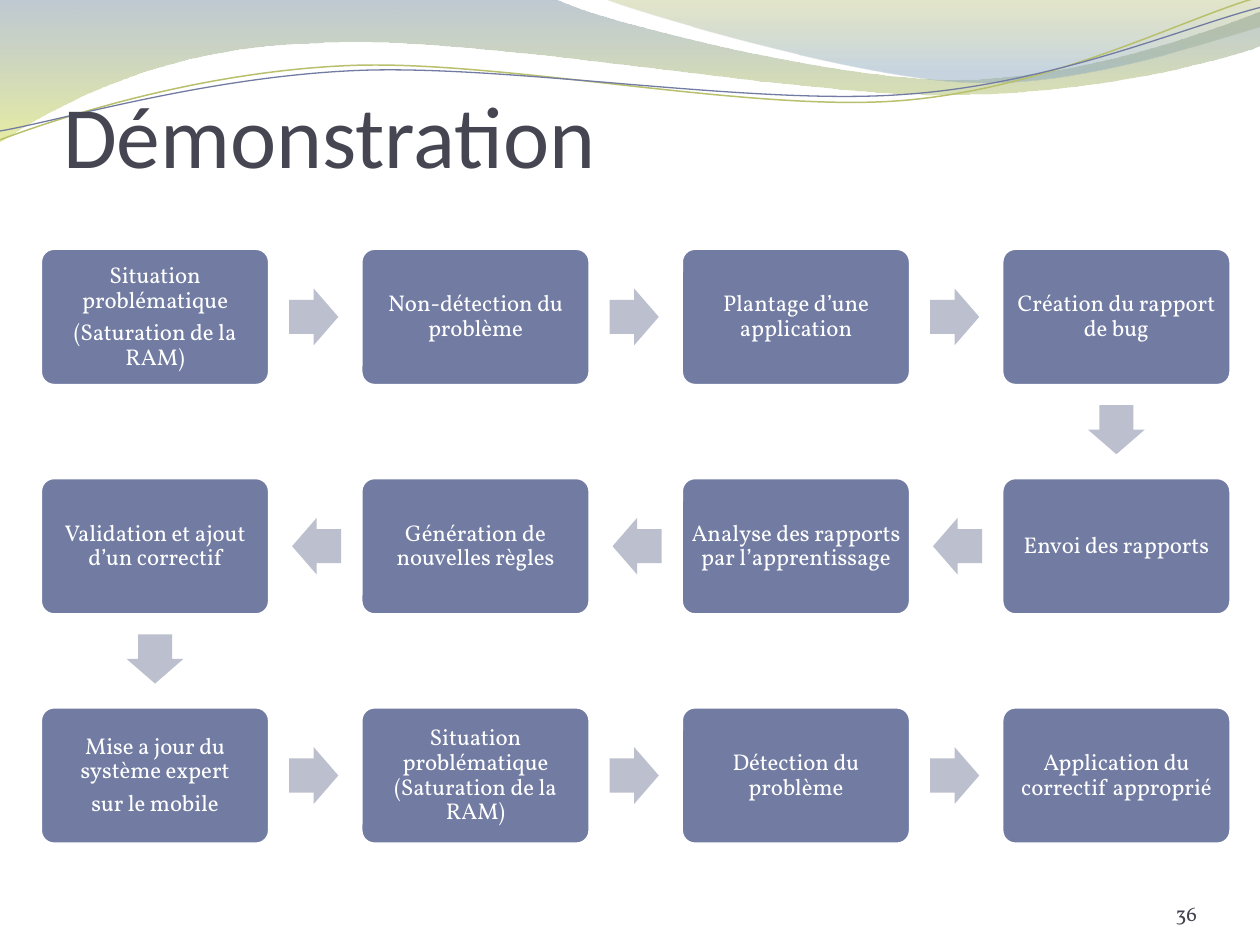
import math

import pptx
import pptx.util
import pptx.dml.color
import pptx.enum.shapes
import pptx.enum.text
import pptx.oxml.ns
import lxml.etree

Inches, Pt = pptx.util.Inches, pptx.util.Pt
RGBColor = pptx.dml.color.RGBColor
MSO_SHAPE = pptx.enum.shapes.MSO_SHAPE
ANCHOR = pptx.enum.text.MSO_ANCHOR
ALIGN = pptx.enum.text.PP_ALIGN
qn = pptx.oxml.ns.qn

WHITE = RGBColor(0xFF, 0xFF, 0xFF)
TITLE_INK = RGBColor(0x46, 0x46, 0x53)
NUMBER_INK = RGBColor(0x43, 0x43, 0x4F)
INDIGO = RGBColor(0x72, 0x7C, 0xA3)
ARROW_GREY = RGBColor(0xBC, 0xBF, 0xCE)
OLIVE_LINE = RGBColor(0xB9, 0xC0, 0x6C)
SLATE = RGBColor(0x72, 0x88, 0x9B)
LIME = RGBColor(0xD3, 0xDE, 0x57)
OLIVE = RGBColor(0xA4, 0xAC, 0x50)
SKY = RGBColor(0x84, 0xA3, 0xBD)

# Each wave is a list of segments: two numbers for a line, six for a Bézier curve
LEFT_WAVE = [(0, 0), (4.4, -0.01), (4.76, 0.17, 6.64, 0.63, 7.58, 0.63),
             (8.53, 0.63, 9.58, 0.26, 10, 0.09), (10.01, 0.36),
             (9.83, 0.44, 8.7, 0.76, 7.46, 0.75),
             (6.22, 0.75, 3.82, 0.28, 2.57, 0.34),
             (1.29, 0.36, 0.46, 0.83, -0.01, 1.13)]
RIGHT_WAVE = [(4.79, -0.01), (5.09, 0.11, 6.82, 0.62, 7.69, 0.65),
              (8.56, 0.69, 9.61, 0.32, 10, 0.21), (10, 0)]
OLIVE_CURVE = [(0, 1.11), (0.48, 0.93, 1.58, 0.57, 2.77, 0.52),
               (3.95, 0.47, 5.93, 0.89, 7.13, 0.8),
               (8.33, 0.71, 9.38, 0.15, 9.98, -0.02)]
INDIGO_CURVE = [(0, 1.04), (0.47, 0.96, 1.64, 0.61, 2.83, 0.56),
                (4.03, 0.51, 5.97, 0.84, 7.17, 0.75),
                (8.36, 0.67, 9.41, 0.21, 10, 0.06)]
CURVE_TILT = -2.7

# Steps in reading order of the grid; the flow snakes through the rows
STEPS = [
    [["Situation problématique", "(Saturation de la RAM)"],
     ["Non-détection du problème"],
     ["Plantage d’une application"],
     ["Création du rapport de bug"]],
    [["Validation et ajout d’un correctif"],
     ["Génération de nouvelles règles"],
     ["Analyse des rapports par l’apprentissage"],
     ["Envoi des rapports"]],
    [["Mise a jour du système expert", "sur le mobile"],
     ["Situation problématique (Saturation de la RAM)"],
     ["Détection du problème"],
     ["Application du correctif approprié"]],
]


def write_text(shape, paragraphs, size, color, font="Vollkorn", align=ALIGN.LEFT,
               anchor=ANCHOR.BOTTOM, margins=(0, 0, 0, 0), line=1.0, after=0):
    frame = shape.text_frame
    frame.word_wrap = True
    frame.auto_size = pptx.enum.text.MSO_AUTO_SIZE.NONE
    frame.vertical_anchor = anchor
    (frame.margin_left, frame.margin_top,
     frame.margin_right, frame.margin_bottom) = map(Inches, margins)
    frame.text = "\n".join(paragraphs)
    for paragraph in frame.paragraphs:
        paragraph.alignment = align
        paragraph.line_spacing = line
        paragraph.space_before, paragraph.space_after = Pt(0), Pt(after)
        for run in paragraph.runs:
            run.font.name, run.font.size = font, Pt(size)
            run.font.color.rgb = color


def turn(point, center, degrees):
    angle = math.radians(degrees)
    dx, dy = point[0] - center[0], point[1] - center[1]
    return (center[0] + dx * math.cos(angle) - dy * math.sin(angle),
            center[1] + dx * math.sin(angle) + dy * math.cos(angle))


def add_wave(slide, segments, closed, tilt=0, center=(0, 0)):
    points = [turn(segment[i:i + 2], center, -tilt)
              for segment in segments for i in range(0, len(segment), 2)]
    points = [(Inches(x), Inches(y)) for x, y in points]
    builder = slide.shapes.build_freeform(*points[0])
    builder.add_line_segments(points[1:], close=closed)
    wave = builder.convert_to_shape()
    wave.rotation = tilt
    wave.shadow.inherit = False
    # Gather each three points of a curved segment into one Bézier command
    commands = iter(list(wave._element.spPr.iter(qn("a:lnTo"))))
    for segment in segments[1:]:
        first = next(commands)
        if len(segment) == 6:
            first.tag = qn("a:cubicBezTo")
            for _ in range(2):
                command = next(commands)
                first.append(command[0])
                command.getparent().remove(command)
    return wave


def add_header_waves(slide):
    # Translucent gradient bands
    bands = [(LEFT_WAVE, [(0, SLATE, 45), (1, LIME, 55)]),
             (RIGHT_WAVE, [(0, OLIVE, 30), (0.8, SKY, 45)])]
    for segments, stops in bands:
        band = add_wave(slide, segments, closed=True)
        band.line.fill.background()
        band.fill.gradient()
        band.fill.gradient_angle = 270
        for stop, (position, color, _) in zip(band.fill.gradient_stops, stops):
            stop.position = position
            stop.color.rgb = color
        colors = band._element.spPr.iter(qn("a:srgbClr"))
        for node, (_, _, opacity) in zip(colors, stops):
            alpha = lxml.etree.SubElement(node, qn("a:alpha"))
            alpha.set("val", str(opacity * 1000))
    # Thin tilted curves
    for segments, color, width, center in [
            (OLIVE_CURVE, OLIVE_LINE, 0.85, (4.99, 0.58)),
            (INDIGO_CURVE, INDIGO, 0.75, (5, 0.59))]:
        curve = add_wave(slide, segments, closed=False, tilt=CURVE_TILT, center=center)
        curve.fill.background()
        curve.line.color.rgb = color
        curve.line.width = Pt(width)


def add_title(slide, left, top, width, height):
    title = slide.shapes.title
    title.left, title.top, title.width, title.height = map(
        Inches, (left, top, width, height))
    write_text(title, ["Démonstration"], 50, TITLE_INK, font="Calibri",
               margins=(0, 0.05, 0, 0))
    slide.shapes._spTree.append(title._element)  # in front of the waves


def add_page_number(slide, left, top, width, height):
    number = slide.shapes.add_textbox(*map(Inches, (left, top, width, height)))
    write_text(number, ["36"], 12, NUMBER_INK, align=ALIGN.RIGHT)


def add_filled(slide, kind, center_x, center_y, width, height, color):
    shape = slide.shapes.add_shape(kind, Inches(center_x - width / 2),
                                   Inches(center_y - height / 2),
                                   Inches(width), Inches(height))
    shape.shadow.inherit = False
    shape.fill.solid()
    shape.fill.fore_color.rgb = color
    shape.line.fill.background()
    return shape


def add_process(slide, left, top, width, height):
    step_width, step_height, arrow_gap = 1.82, 1.09, 0.35
    rows, columns = len(STEPS), len(STEPS[0])
    pitch_x = (width - step_width) / (columns - 1)
    pitch_y = (height - step_height) / (rows - 1)
    for row, labels in enumerate(STEPS):
        forward = row % 2 == 0
        order = range(columns) if forward else range(columns - 1, -1, -1)
        for column in order:
            x = left + step_width / 2 + column * pitch_x
            y = top + step_height / 2 + row * pitch_y
            # Step
            step = add_filled(slide, MSO_SHAPE.ROUNDED_RECTANGLE, x, y,
                              step_width, step_height, INDIGO)
            step.adjustments[0] = 0.1
            step.line.color.rgb = WHITE
            step.line.width = Pt(2)
            write_text(step, labels[column], 13, WHITE, align=ALIGN.CENTER,
                       anchor=ANCHOR.MIDDLE, margins=(0.02,) * 4, line=0.9, after=4.5)
            # Arrow to the next step: along the row, or down at its end
            if column != order[-1]:
                x += (1 if forward else -1) * (step_width / 2 + arrow_gap)
                rotation = 0 if forward else 180
            elif row < rows - 1:
                y += step_height / 2 + arrow_gap
                rotation = 90
            else:
                continue
            arrow = add_filled(slide, MSO_SHAPE.RIGHT_ARROW, x, y, 0.39, 0.45, ARROW_GREY)
            arrow.adjustments[0], arrow.adjustments[1] = 0.6, 0.5
            arrow.rotation = rotation


def main():
    deck = pptx.Presentation()
    deck.slide_width, deck.slide_height = Inches(10), Inches(7.5)
    slide = deck.slides.add_slide(deck.slide_layouts[5])
    add_header_waves(slide)
    add_title(slide, 0.5, 0.23, 9, 1.25)
    add_page_number(slide, 8.67, 6.95, 0.83, 0.4)
    add_process(slide, 0.32, 1.97, 9.45, 4.73)
    deck.save("out.pptx")


if __name__ == "__main__":
    main()
